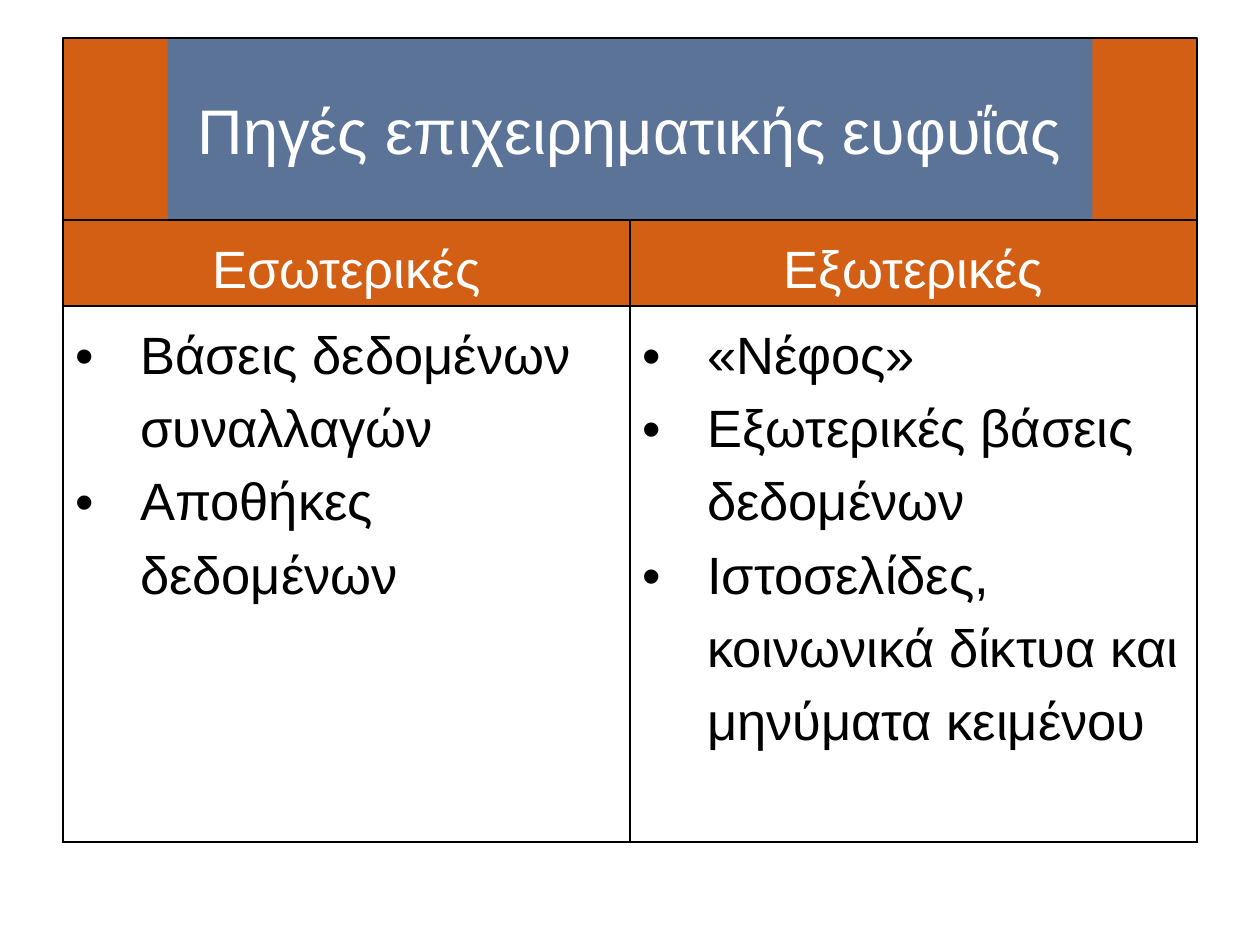
from lxml.etree import SubElement
from pptx import Presentation
from pptx.dml.color import RGBColor
from pptx.enum.shapes import MSO_SHAPE
from pptx.enum.text import MSO_ANCHOR, MSO_AUTO_SIZE, PP_ALIGN
from pptx.oxml.ns import qn
from pptx.util import Cm, Pt

BLACK, WHITE, ORANGE, BLUE = "000000", "FFFFFF", "D25F14", "5A7396"
LEFT, TOP, WIDTH = 1.27, 0.76, 22.86
BANNER_HEIGHT, SIDE_WIDTH = 3.68, 2.11
ROW_HEIGHTS = (1.73, 10.8)

COLUMNS = {
    "Εσωτερικές": ["Βάσεις δεδομένων συναλλαγών", "Αποθήκες δεδομένων"],
    "Εξωτερικές": [
        "«Νέφος»",
        "Εξωτερικές βάσεις δεδομένων",
        "Ιστοσελίδες, κοινωνικά δίκτυα και μηνύματα κειμένου",
    ],
}


def color(value):
    return RGBColor.from_string(value)


class SlideBuilder:
    font_name = "Arial"
    title_size = 36
    text_size = 30
    line_spacing = 1.25
    bullet_indent = 1.3
    border_width = 1

    def __init__(self, slide):
        self.slide = slide

    def format_paragraph(self, paragraph, size, text_color, alignment):
        paragraph.alignment = alignment
        font = paragraph.font
        font.name = self.font_name
        font.size = Pt(size)
        font.color.rgb = color(text_color)

    def add_title(self, text, left, top, width, height):
        title = self.slide.shapes.title
        title.left, title.top, title.width, title.height = map(Cm, (left, top, width, height))
        title.fill.solid()
        title.fill.fore_color.rgb = color(BLUE)
        frame = title.text_frame
        frame.text = text
        frame.auto_size = MSO_AUTO_SIZE.NONE
        frame.vertical_anchor = MSO_ANCHOR.MIDDLE
        self.format_paragraph(frame.paragraphs[0], self.title_size, WHITE, PP_ALIGN.CENTER)

    def add_rectangle(self, left, top, width, height, fill=None, line=None):
        shape = self.slide.shapes.add_shape(
            MSO_SHAPE.RECTANGLE, *map(Cm, (left, top, width, height)))
        shape.shadow.inherit = False
        if fill:
            shape.fill.solid()
            shape.fill.fore_color.rgb = color(fill)
        else:
            shape.fill.background()
        if line:
            shape.line.color.rgb = color(line)
            shape.line.width = Pt(self.border_width)
        else:
            shape.line.fill.background()

    def add_borders(self, cell):
        properties = cell._tc.get_or_add_tcPr()
        for side in ("a:lnL", "a:lnR", "a:lnT", "a:lnB"):
            line = SubElement(properties, qn(side), w=str(Pt(self.border_width)))
            fill = SubElement(line, qn("a:solidFill"))
            SubElement(fill, qn("a:srgbClr"), val=BLACK)

    def add_bullet(self, paragraph):
        properties = paragraph._p.get_or_add_pPr()
        indent = Cm(self.bullet_indent)
        properties.set("marL", str(indent))
        properties.set("indent", str(-indent))
        SubElement(properties, qn("a:buFont"), typeface=self.font_name)
        SubElement(properties, qn("a:buChar"), char="•")

    def fill_cell(self, cell, lines, text_color, alignment, fill=None, bulleted=False):
        self.add_borders(cell)
        if fill:
            cell.fill.solid()
            cell.fill.fore_color.rgb = color(fill)
        else:
            cell.fill.background()
        cell.text = "\n".join(lines)
        for paragraph in cell.text_frame.paragraphs:
            paragraph.line_spacing = self.line_spacing
            if bulleted:
                self.add_bullet(paragraph)
            self.format_paragraph(paragraph, self.text_size, text_color, alignment)

    def add_table(self, columns, left, top, width, row_heights):
        frame = self.slide.shapes.add_table(
            len(row_heights), len(columns),
            *map(Cm, (left, top, width, sum(row_heights))))
        table = frame.table
        for row, height in zip(table.rows, row_heights):
            row.height = Cm(height)
        for index, (heading, items) in enumerate(columns.items()):
            table.columns[index].width = Cm(width / len(columns))
            self.fill_cell(table.cell(0, index), [heading], WHITE, PP_ALIGN.CENTER, fill=ORANGE)
            self.fill_cell(table.cell(1, index), items, BLACK, PP_ALIGN.LEFT, bulleted=True)


def main():
    presentation = Presentation()
    presentation.slide_width, presentation.slide_height = Cm(25.4), Cm(19.05)
    title_only = presentation.slide_layouts.get_by_name("Title Only")
    builder = SlideBuilder(presentation.slides.add_slide(title_only))
    banner = (LEFT, TOP, WIDTH, BANNER_HEIGHT)
    builder.add_title("Πηγές επιχειρηματικής ευφυΐας", *banner)
    builder.add_table(COLUMNS, LEFT, TOP + BANNER_HEIGHT, WIDTH, ROW_HEIGHTS)
    for left in (LEFT, LEFT + WIDTH - SIDE_WIDTH):
        builder.add_rectangle(left, TOP, SIDE_WIDTH, BANNER_HEIGHT, fill=ORANGE)
    builder.add_rectangle(*banner, line=BLACK)
    presentation.save("out.pptx")


if __name__ == "__main__":
    main()
